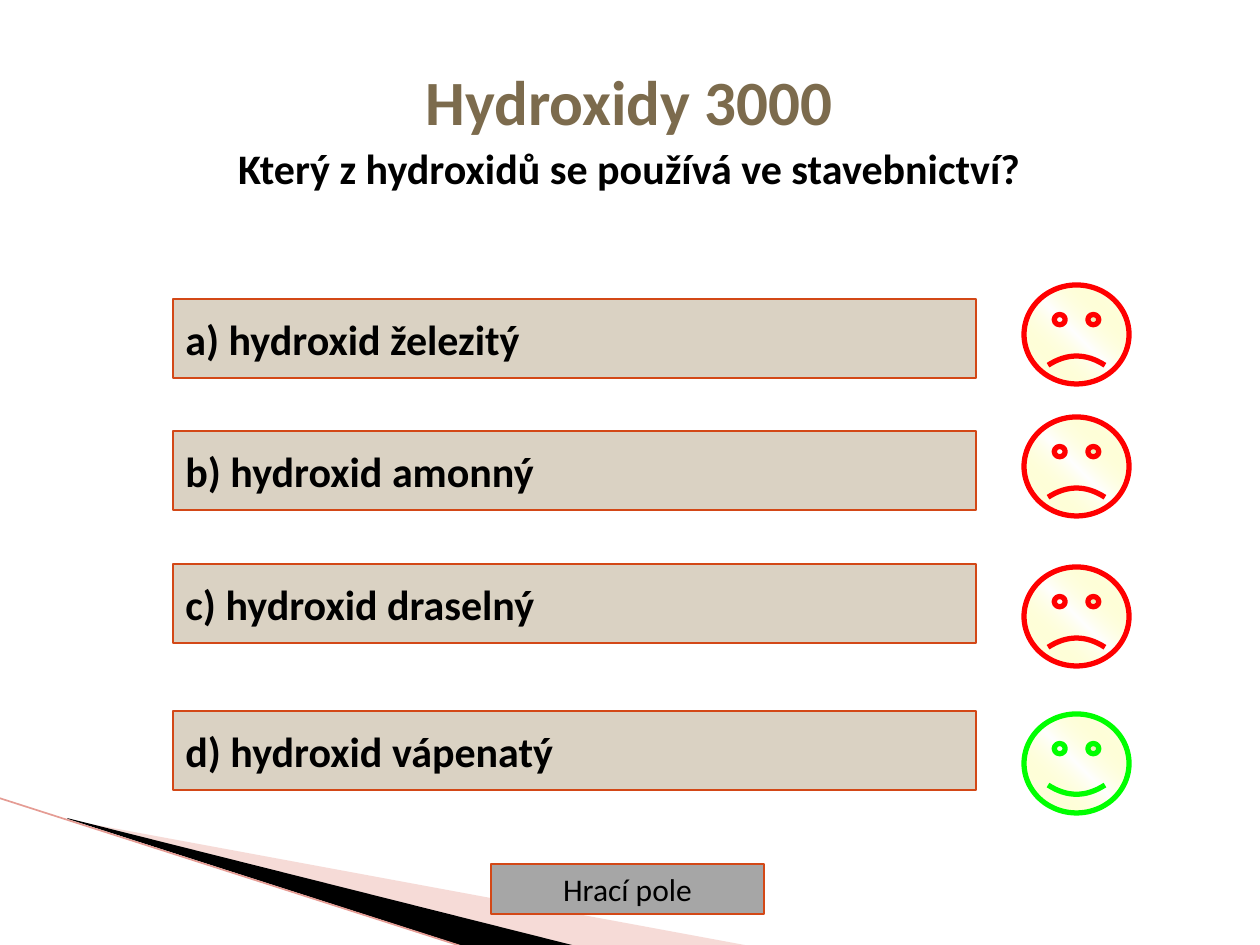
"""Build the quiz slide about hydroxides."""
from lxml import etree
from pptx import Presentation
from pptx.dml.color import RGBColor
from pptx.enum.shapes import MSO_CONNECTOR, MSO_SHAPE
from pptx.enum.text import MSO_ANCHOR, MSO_AUTO_SIZE, PP_ALIGN
from pptx.oxml import parse_xml
from pptx.oxml.ns import nsdecls, qn
from pptx.util import Emu, Pt

BUTTON, FACE = MSO_SHAPE.ACTION_BUTTON_CUSTOM, MSO_SHAPE.SMILEY_FACE
STRAIGHT = MSO_CONNECTOR.STRAIGHT
LEFT, CENTER = PP_ALIGN.LEFT, PP_ALIGN.CENTER
TOP, MIDDLE = MSO_ANCHOR.TOP, MSO_ANCHOR.MIDDLE
NO_FIT = MSO_AUTO_SIZE.NONE

HEADING = "Hydroxidy 3000"
QUESTION = "Který z hydroxidů se používá ve stavebnictví?"
ANSWERS = [
    ("a) hydroxid železitý", 299, 285, False),
    ("b) hydroxid amonný", 431, 417, False),
    ("c) hydroxid draselný", 564, 567, False),
    ("d) hydroxid vápenatý", 711, 714, True),
]
BACK_LABEL = "Hrací pole"
WEDGES = [
    ("E9A59D", 40, [(69, 820), (750, 946), (575, 946), (69, 819)]),
    ("000000", 100, [(67, 818), (576, 946), (469, 948), (68, 819)]),
]
EDGE = (-1, 798, 467, 948)
FACE_STOPS = [(0, "FFFFFF", 100), (50, "FFFF66", 0), (100, "FFFFFF", 100)]
SCALE = 914400 / 126


def px(length):
    return Emu(round(length * SCALE))


def color(value):
    return RGBColor.from_string(value)


def write(para, text, size=24, ink="000000", bold=True, align=LEFT, before=0):
    para.alignment = align
    para.space_before = Pt(before)
    span = para.add_run()
    span.text = text
    span.font.name = "Calibri"
    span.font.size = Pt(size)
    span.font.bold = bold
    span.font.color.rgb = color(ink)


def add_shape(page, kind, place, line, width):
    shape = page.shapes.add_shape(kind, *map(px, place))
    shape.shadow.inherit = False
    shape.line.color.rgb = color(line)
    shape.line.width = Pt(width)
    return shape


def add_button(page, text, place, fill, width=1, **style):
    button = add_shape(page, BUTTON, place, "D34817", width)
    button.fill.solid()
    button.fill.fore_color.rgb = color(fill)
    button.text_frame.word_wrap = False
    button.text_frame.vertical_anchor = MIDDLE
    write(button.text_frame.paragraphs[0], text, **style)


def add_face(page, top, happy):
    face = add_shape(page, FACE, (1024, top, 105, 99), "00FF00" if happy else "FF0000", 3)
    face.adjustments[0] = 0.047 if happy else -0.047
    stops = "".join(
        f'<a:gs pos="{pos * 1000}"><a:srgbClr val="{value}">'
        f'<a:alpha val="{alpha * 1000}"/></a:srgbClr></a:gs>'
        for pos, value, alpha in FACE_STOPS
    )
    gradient = parse_xml(
        f'<a:gradFill {nsdecls("a")} rotWithShape="1"><a:gsLst>{stops}</a:gsLst>'
        '<a:lin ang="18900000" scaled="1"/></a:gradFill>'
    )
    face._element.spPr.find(qn("a:prstGeom")).addnext(gradient)


def add_wedge(page, fill, alpha, points):
    corners = [(px(x), px(y)) for x, y in points]
    builder = page.shapes.build_freeform(*corners[0])
    builder.add_line_segments(corners[1:], close=True)
    wedge = builder.convert_to_shape()
    wedge.shadow.inherit = False
    wedge.line.fill.background()
    wedge.fill.solid()
    wedge.fill.fore_color.rgb = color(fill)
    if alpha < 100:
        value = wedge._element.spPr.find(".//" + qn("a:srgbClr"))
        etree.SubElement(value, qn("a:alpha"), val=str(alpha * 1000))


def add_edge(page):
    edge = page.shapes.add_connector(STRAIGHT, *map(px, EDGE))
    edge.line.color.rgb = color("E59C94")
    edge.line.width = Pt(0.95)
    etree.SubElement(edge._element.spPr, qn("a:effectLst"))


def fill_title(page):
    title = page.shapes.title
    title.left, title.top, title.width, title.height = map(px, (49, 56, 1160, 95))
    frame = title.text_frame
    frame.word_wrap = True
    frame.auto_size = NO_FIT
    frame.vertical_anchor = TOP
    write(frame.paragraphs[0], HEADING, size=36, ink="7C6B4D", align=CENTER)
    write(frame.add_paragraph(), QUESTION, align=CENTER, before=2.5)


def main():
    deck = Presentation()
    deck.slide_width, deck.slide_height = px(1260), px(945)
    page = deck.slides.add_slide(deck.slide_layouts[5])
    fill_title(page)
    for wedge in WEDGES:
        add_wedge(page, *wedge)
    add_edge(page)
    add_button(page, BACK_LABEL, (491, 864, 273, 50), "A6A6A6",
               width=0.75, size=18, bold=False, align=CENTER)
    for text, top, face_top, correct in ANSWERS:
        add_button(page, text, (173, top, 803, 79), "DAD2C3")
        add_face(page, face_top, correct)
    deck.save("out.pptx")


if __name__ == "__main__":
    main()
